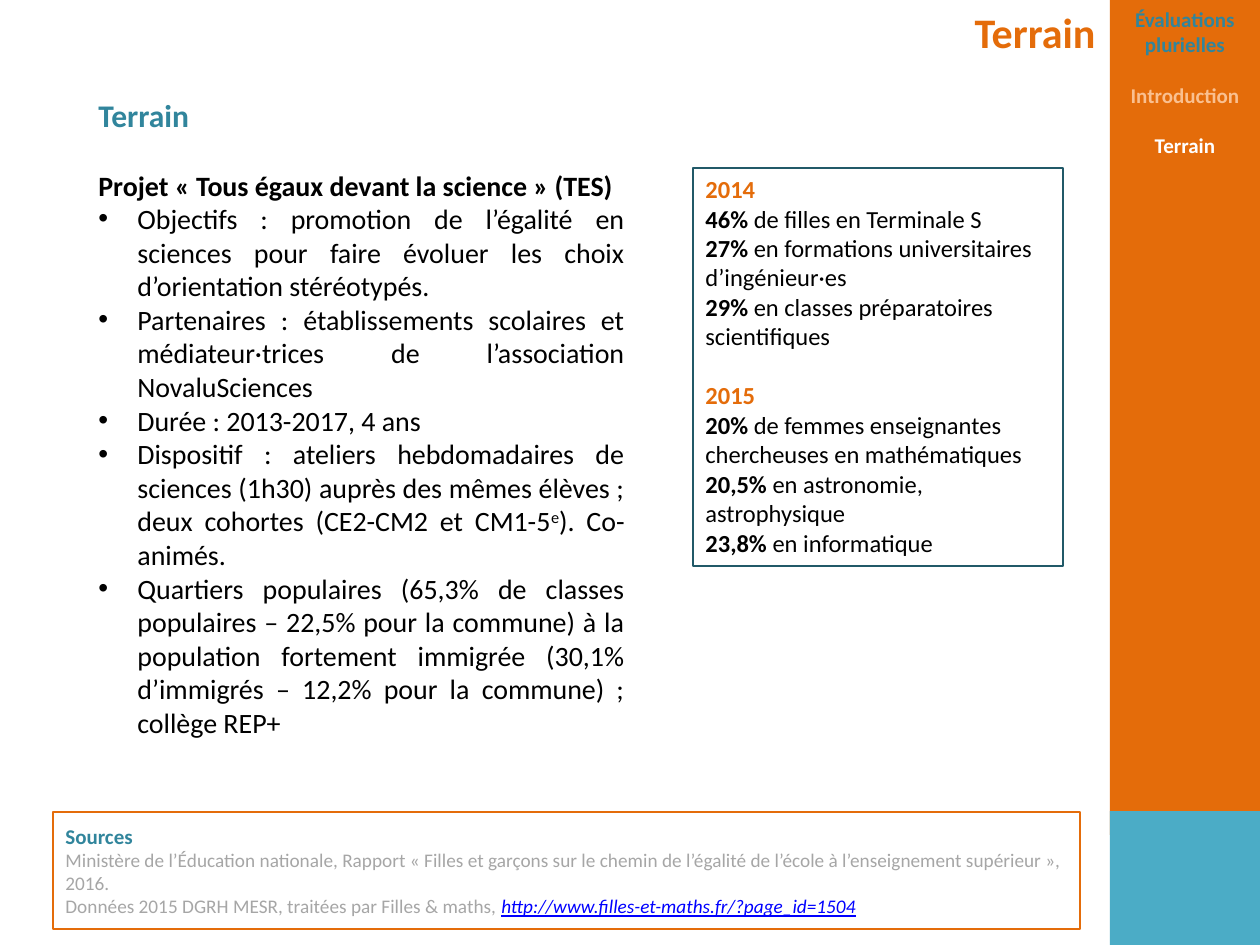
from dataclasses import dataclass
from typing import NamedTuple

from lxml.etree import SubElement
from pptx import Presentation
from pptx.dml.color import RGBColor as Rgb
from pptx.enum.shapes import MSO_SHAPE as Geo
from pptx.enum.text import MSO_ANCHOR as Anchor, MSO_AUTO_SIZE as Fit, PP_ALIGN as Align
from pptx.oxml.ns import qn
from pptx.util import Pt

PX = 914400 / 126  # EMU in one px


@dataclass(frozen=True)
class Theme:
    font: str = "Calibri"
    orange: str = "E46C0A"
    peach: str = "FAC090"
    teal: str = "31859C"
    dark: str = "215968"
    aqua: str = "4BACC6"
    grey: str = "A6A6A6"
    link: str = "0000FF"
    black: str = "000000"
    white: str = "FFFFFF"
    title: int = 24
    head: int = 18
    body: int = 16
    stat: int = 14
    menu: int = 12
    note: int = 11


T = Theme()


class Box(NamedTuple):
    x: int
    y: int
    w: int
    h: int


class Run(NamedTuple):
    text: str
    size: int
    color: str = T.black
    bold: bool = False
    link: bool = False
    sup: bool = False


class Para(NamedTuple):
    runs: list[Run]
    gap: float = 0  # points above
    bullet: bool = False


def px(n: int) -> int:
    return round(n * PX)


def place(shape, box: Box) -> None:
    shape.left, shape.top, shape.width, shape.height = map(px, box)


def add_bullet(para) -> None:
    props = para._p.get_or_add_pPr()
    props.set("marL", str(px(39)))
    props.set("indent", str(px(-39)))
    SubElement(props, qn("a:buFont")).set("typeface", "Arial")
    SubElement(props, qn("a:buChar")).set("char", "•")


def write(shape, paras: list[Para], align=Align.LEFT, anchor=Anchor.TOP, wrap=True) -> None:
    frame = shape.text_frame
    frame.auto_size = Fit.NONE
    frame.word_wrap = wrap
    frame.vertical_anchor = anchor
    for i, item in enumerate(paras):
        para = frame.add_paragraph() if i else frame.paragraphs[0]
        para.alignment = align
        para.space_before = Pt(item.gap)
        if item.bullet:
            add_bullet(para)
        for part in item.runs:
            run = para.add_run()
            run.text = part.text
            font = run.font
            font.name, font.size, font.bold = T.font, Pt(part.size), part.bold
            font.color.rgb = Rgb.from_string(part.color)
            if part.link:
                font.italic = font.underline = True
            if part.sup:
                run._r.get_or_add_rPr().set("baseline", "30000")


def add_rect(slide, box: Box, fill: str = "", line: str = "", width: float = 1):
    rect = slide.shapes.add_shape(Geo.RECTANGLE, *map(px, box))
    rect.shadow.inherit = False
    if fill:
        rect.fill.solid()
        rect.fill.fore_color.rgb = Rgb.from_string(fill)
    else:
        rect.fill.background()
    if line:
        rect.line.color.rgb = Rgb.from_string(line)
        rect.line.width = Pt(width)
    else:
        rect.line.fill.background()
    return rect


def head(text: str, size: int, color: str, gap: float = 0) -> Para:
    return Para([Run(text, size, color, True)], gap)


def point(text: str, sup: str = "", rest: str = "") -> Para:
    runs = [Run(text, T.body)]
    if sup:
        runs += [Run(sup, T.body, sup=True), Run(rest, T.body)]
    return Para(runs, bullet=True)


def stat(rate: str, text: str) -> Para:
    return Para([Run(f"{rate} ", T.stat, bold=True), Run(text, T.stat)])


MENU = [
    head("Évaluations plurielles", T.menu, T.teal),
    head("Introduction", T.menu, T.peach, 14.6),
    head("Terrain", T.menu, T.white, 14.6),
]

BODY = [
    head("Terrain", T.head, T.teal),
    head("Projet « Tous égaux devant la science » (TES)", T.body, T.black, 19.5),
    point("Objectifs : promotion de l’égalité en sciences pour faire évoluer "
          "les choix d’orientation stéréotypés."),
    point("Partenaires : établissements scolaires et médiateur·trices "
          "de l’association NovaluSciences"),
    point("Durée : 2013-2017, 4 ans"),
    point("Dispositif : ateliers hebdomadaires de sciences (1h30) auprès des "
          "mêmes élèves ; deux cohortes (CE2-CM2 et CM1-5", "e", "). Co-animés."),
    point("Quartiers populaires (65,3% de classes populaires – 22,5% pour la "
          "commune) à la population fortement immigrée (30,1% d’immigrés – "
          "12,2% pour la commune) ; collège REP+"),
]

STATS = [
    head("2014", T.stat, T.orange),
    stat("46%", "de filles en Terminale S"),
    stat("27%", "en formations universitaires d’ingénieur·es"),
    stat("29%", "en classes préparatoires scientifiques"),
    head("2015", T.stat, T.orange, 17),
    stat("20%", "de femmes enseignantes chercheuses en mathématiques"),
    stat("20,5%", "en astronomie, astrophysique"),
    stat("23,8%", "en informatique"),
]

NOTES = [
    head("Sources", T.menu, T.teal),
    Para([Run("Ministère de l’Éducation nationale, Rapport « Filles et garçons sur le chemin "
              "de l’égalité de l’école à l’enseignement supérieur », 2016.", T.note, T.grey)]),
    Para([Run("Données 2015 DGRH MESR, traitées par Filles & maths, ", T.note, T.grey),
          Run("http://www.filles-et-maths.fr/?page_id=1504", T.note, T.link, link=True)]),
]


def main() -> None:
    deck = Presentation()
    deck.slide_width, deck.slide_height = px(1260), px(945)
    slide = deck.slides.add_slide(deck.slide_layouts[5])

    # Title
    title = slide.shapes.title
    place(title, Box(959, 0, 152, 63))
    write(title, [head("Terrain", T.title, T.orange)], Align.CENTER, wrap=False)

    # Side menu
    menu = add_rect(slide, Box(1110, 0, 150, 835), T.orange)
    write(menu, MENU, Align.CENTER)
    add_rect(slide, Box(1110, 811, 150, 134), T.aqua)

    # Project description
    body = slide.shapes.add_textbox(*map(px, Box(86, 90, 551, 695)))
    write(body, BODY, Align.JUSTIFY)

    # Key figures
    stats = add_rect(slide, Box(693, 168, 370, 398), line=T.dark, width=0.75)
    write(stats, STATS)

    # Sources
    notes = add_rect(slide, Box(53, 812, 1027, 117), T.white, T.orange)
    write(notes, NOTES, anchor=Anchor.MIDDLE)

    deck.save("out.pptx")


if __name__ == "__main__":
    main()
